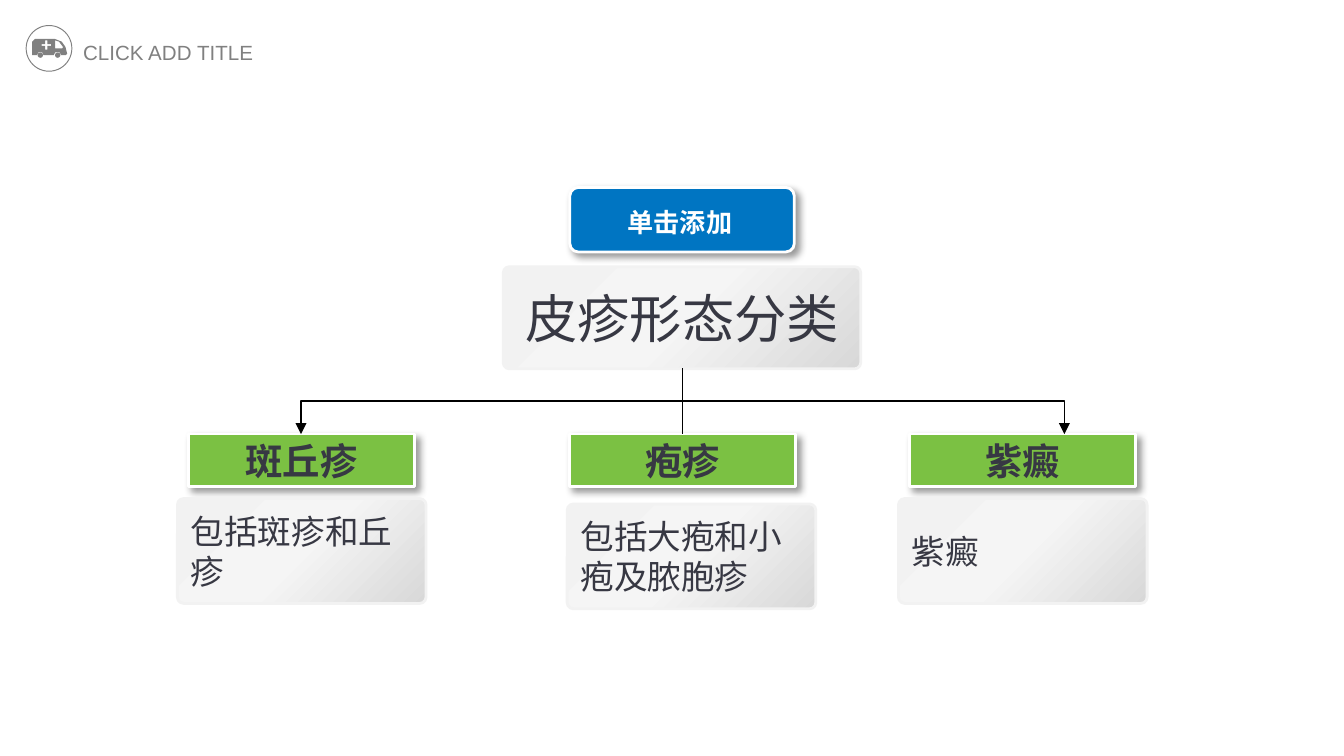
import copy

import lxml.etree
import pptx
import pptx.dml.color
import pptx.enum.shapes
import pptx.enum.text
import pptx.oxml.ns
import pptx.util

RGBColor = pptx.dml.color.RGBColor
WHITE = RGBColor(0xFF, 0xFF, 0xFF)
BLACK = RGBColor(0, 0, 0)
GREY = RGBColor(0x80, 0x80, 0x80)
PALE = RGBColor(0xF2, 0xF2, 0xF2)
INK = RGBColor(0x37, 0x38, 0x43)
BLUE = RGBColor(0x00, 0x75, 0xC2)
GREEN = RGBColor(0x7B, 0xC1, 0x43)
SHEEN = [(0, RGBColor(0xD8, 0xD8, 0xD8)), (0.5, RGBColor(0xF5, 0xF5, 0xF5)), (1, PALE)]
HAN = "Noto Sans CJK SC"

KIND = pptx.enum.shapes.MSO_SHAPE
LINK = pptx.enum.shapes.MSO_CONNECTOR
ALIGN = pptx.enum.text.PP_ALIGN
ANCHOR = pptx.enum.text.MSO_ANCHOR
qn = pptx.oxml.ns.qn

deck = pptx.Presentation()
deck.slide_width = pptx.util.Inches(10)
deck.slide_height = deck.slide_width * 9 // 16
slide = deck.slides.add_slide(deck.slide_layouts[6])
shapes = slide.shapes
UNIT = deck.slide_width / 100  # every length below is a percent of slide width


def write(text, shape, size, font=HAN, color=INK, bold=False, align=ALIGN.CENTER,
          anchor=ANCHOR.MIDDLE, wrap=True, space=None, inset=0.85):
    frame = shape.text_frame
    frame.word_wrap = wrap
    frame.vertical_anchor = anchor
    frame.margin_left = frame.margin_right = round(inset * UNIT)
    frame.margin_top = frame.margin_bottom = round(inset / 2 * UNIT)
    para = frame.paragraphs[0]
    para.alignment = align
    para.line_spacing = space
    run = para.add_run()
    run.text = text
    run.font.name = font
    run.font.size = pptx.util.Pt(size)
    run.font.bold = bold
    run.font.color.rgb = color
    east = lxml.etree.SubElement(run.font._element, qn("a:ea"))
    east.set("typeface", HAN)


def draw(kind, box, fill=None, line=None, width=1.5, round_by=None, shade=False):
    """Add a preset shape; a list as fill means gradient stops."""
    shape = shapes.add_shape(kind, *[round(v * UNIT) for v in box])
    if round_by:
        shape.adjustments[0] = round_by
    if fill is None:
        shape.fill.background()
    elif isinstance(fill, list):
        shape.fill.gradient()
        shape.fill.gradient_angle = 135
        stops = shape._element.spPr.find(".//" + qn("a:gsLst"))
        stops.append(copy.deepcopy(stops[0]))
        for stop, (place, color) in zip(shape.fill.gradient_stops, fill):
            stop.position = place
            stop.color.rgb = color
    else:
        shape.fill.solid()
        shape.fill.fore_color.rgb = fill
    if line is None:
        shape.line.fill.background()
    else:
        shape.line.color.rgb = line
        shape.line.width = pptx.util.Pt(width)
    shape.shadow.inherit = False
    if shade:
        effects = shape._element.spPr.find(qn("a:effectLst"))
        cast = lxml.etree.SubElement(effects, qn("a:outerShdw"), blurRad="50800",
                                     dist="38100", dir="2700000", algn="tl", rotWithShape="0")
        tint = lxml.etree.SubElement(cast, qn("a:srgbClr"), val=str(BLACK))
        lxml.etree.SubElement(tint, qn("a:alpha"), val="40000")
    return shape


# Header: van badge and title
title = shapes.add_textbox(*[round(v * UNIT) for v in (5.2, 2.1, 16, 2.8)])
write("CLICK ADD TITLE", title, 11, font="Arial", color=GREY, align=ALIGN.LEFT,
      anchor=ANCHOR.TOP, wrap=False, space=1.2, inset=1)
for left in (4.1, 2.8):
    draw(KIND.OVAL, (left, 3.9, 0.4, 0.4), fill=GREY)
body = [(2.4, 3.1), (2.6, 2.9), (4.1, 2.9), (4.6, 3.1), (4.88, 3.5), (5, 4), (4.9, 4.1),
        (4.55, 4.1), (4.45, 3.9), (4.3, 3.85), (4.1, 3.9), (4, 4.1), (3.24, 4.1),
        (3.15, 3.9), (3, 3.85), (2.85, 3.9), (2.76, 4.1), (2.4, 4.1)]
glass = [(4.1, 3), (4.1, 3.6), (4.65, 3.6), (4.7, 3.5), (4.4, 3.1)]
cross = [(3.1, 3.28), (3.1, 3.42), (3.37, 3.42), (3.37, 3.7), (3.52, 3.7), (3.52, 3.42),
         (3.8, 3.42), (3.8, 3.28), (3.52, 3.28), (3.52, 3), (3.37, 3), (3.37, 3.28)]
pen = shapes.build_freeform(*[round(v * UNIT) for v in body[0]])
for ring in (body, glass, cross):
    dots = [(round(x * UNIT), round(y * UNIT)) for x, y in ring]
    if ring is not body:
        pen.move_to(*dots[0])
    pen.add_line_segments(dots[1:], close=True)
van = pen.convert_to_shape()
van.fill.solid()
van.fill.fore_color.rgb = GREY
van.line.fill.background()
van.shadow.inherit = False
draw(KIND.OVAL, (1.95, 1.9, 3.4, 3.4), line=GREY, width=0.5)

# Root of the tree
draw(KIND.ROUNDED_RECTANGLE, (42.4, 13.95, 16.7, 4.8), fill=BLUE, line=WHITE,
     round_by=0.13, shade=True)
label = shapes.add_textbox(*[round(v * UNIT) for v in (45.75, 14.9, 9.7, 3.2)])
write("单击添加", label, 14, font="Arial", color=WHITE, bold=True)
root = draw(KIND.ROUNDED_RECTANGLE, (37.45, 19.85, 26.6, 7.6), fill=SHEEN, line=PALE,
            round_by=0.06)
write("皮疹形态分类", root, 28)

# Branches: name, note, note font, left of name, left and top of note
for name, note, font, head, left, top in (
        ("斑丘疹", "包括斑疹和丘疹", "Lato", 14.05, 13.2, 37.1),
        ("紫癜", "紫癜", HAN, 67.7, 66.85, 37.1),
        ("疱疹", "包括大疱和小疱及脓胞疹", "Lato", 42.4, 42.2, 37.5)):
    tab = draw(KIND.RECTANGLE, (head, 32.3, 16.8, 3.9), fill=GREEN, line=WHITE, shade=True)
    write(name, tab, 20, bold=True)
    card = draw(KIND.ROUNDED_RECTANGLE, (left, top, 18.5, 7.8), fill=SHEEN, line=PALE,
                round_by=0.06)
    write(note, card, 18, font=font, align=ALIGN.LEFT)

# Links from the root; elbows are laid out sideways, then turned a quarter
stem, start, drop, reach = 50.8, 27.4, 4.9, 28.4
for side in (0, -1, 1):
    if side:
        mid_x, mid_y = stem + side * reach / 2, start + drop / 2
        ends = (mid_x + side * drop / 2, mid_y - reach / 2,
                mid_x - side * drop / 2, mid_y + reach / 2)
    else:
        ends = (stem, start, stem, start + drop)
    link = shapes.add_connector(LINK.ELBOW if side else LINK.STRAIGHT,
                                *[round(v * UNIT) for v in ends])
    link.line.color.rgb = BLACK
    link.line.width = pptx.util.Pt(0.75)
    props = link._element.spPr
    if side:
        props.find(qn("a:xfrm")).set("rot", "5400000" if side < 0 else "16200000")
        lxml.etree.SubElement(props.find(qn("a:ln")), qn("a:tailEnd"), type="triangle")
    lxml.etree.SubElement(props, qn("a:effectLst"))

deck.save("out.pptx")
